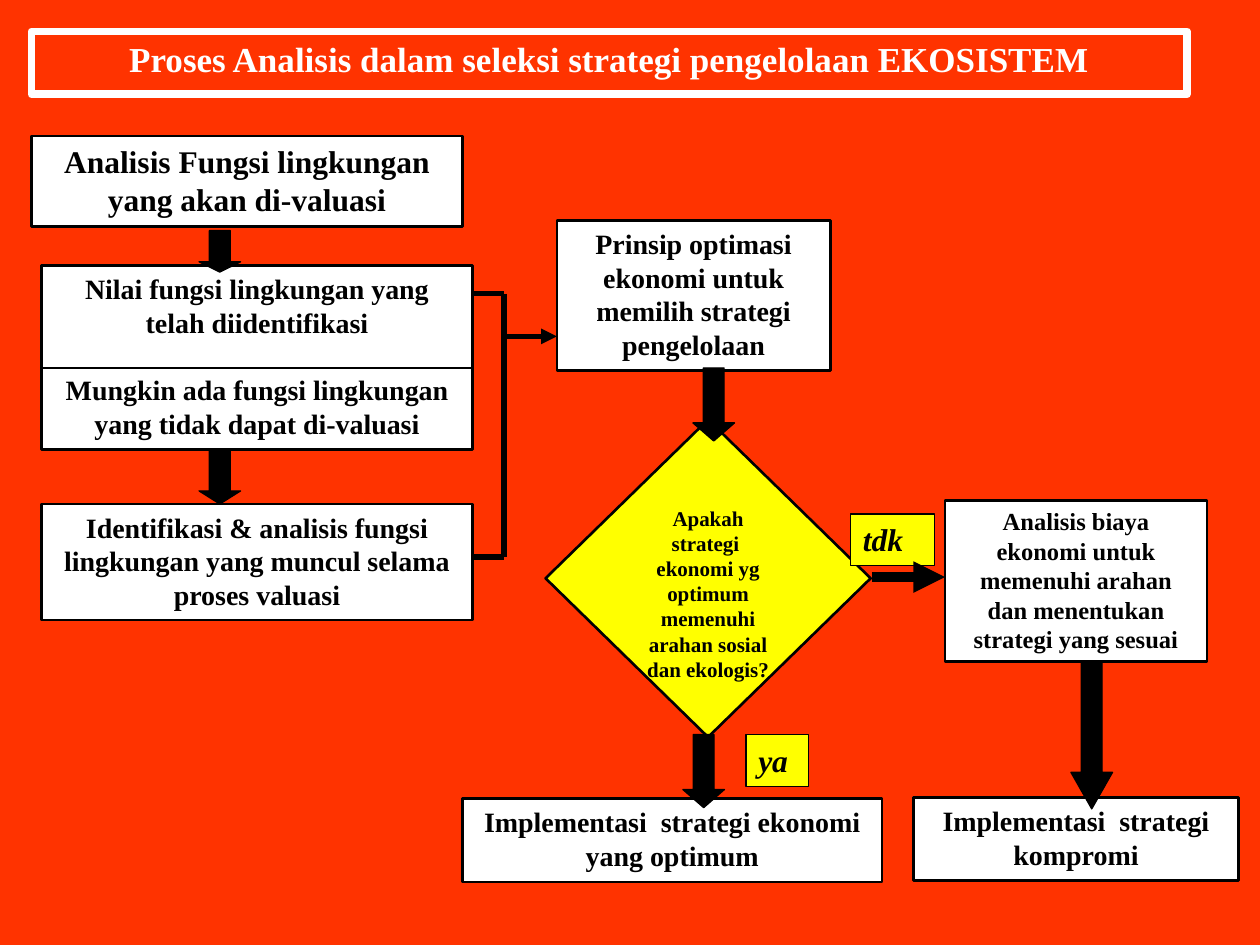
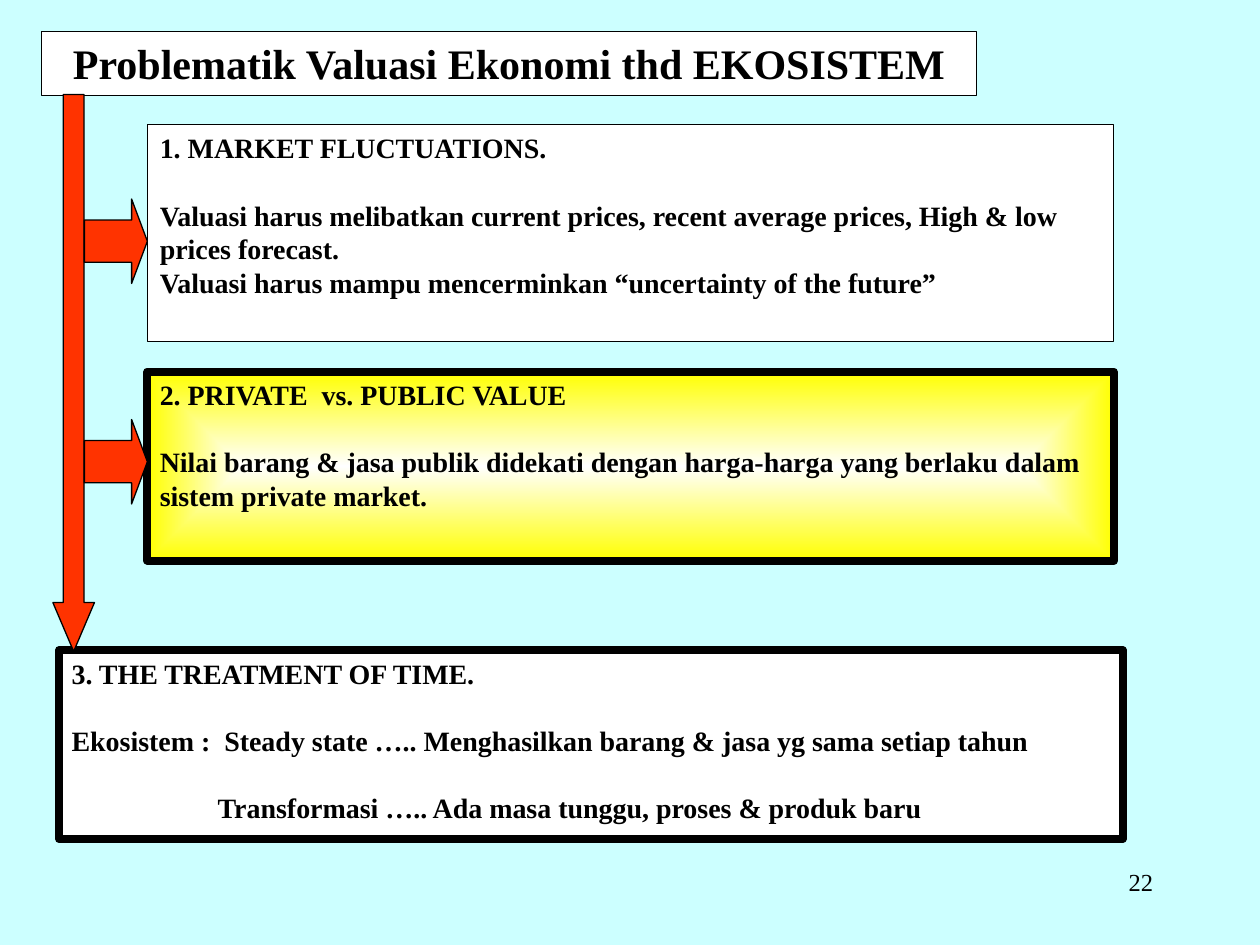
from pptx import Presentation
from pptx.dml.color import RGBColor
from pptx.enum.shapes import MSO_CONNECTOR, MSO_SHAPE
from pptx.enum.text import MSO_ANCHOR, PP_ALIGN
from pptx.oxml.ns import qn
from pptx.util import Inches, Pt
from lxml.etree import SubElement

RED = RGBColor(0xFF, 0x33, 0x00)
AQUA = RGBColor(0xCC, 0xFF, 0xFF)
WHITE = RGBColor(0xFF, 0xFF, 0xFF)
BLACK = RGBColor(0x00, 0x00, 0x00)
YELLOW = RGBColor(0xFF, 0xFF, 0x00)

CENTER = {"alignment": PP_ALIGN.CENTER}
LEFT = {"alignment": PP_ALIGN.LEFT}
RIGHT = {"alignment": PP_ALIGN.RIGHT}
GAP = {"space_before": Pt(19.2)}


class Deck:
    """Builds slides of boxes, block arrows and lines in one shared style."""

    def __init__(self):
        self.prs = Presentation()
        self.prs.slide_width, self.prs.slide_height = Inches(10), Inches(7.5)
        self.font = {"name": "Times New Roman", "bold": True}
        self.s = None

    def slide(self, background):
        self.s = self.prs.slides.add_slide(self.prs.slide_layouts[6])
        fill = self.s.background.fill
        fill.solid()
        fill.fore_color.rgb = background

    def text(self, sp, paragraphs, size, layout, color=BLACK, **font):
        tf = sp.text_frame
        tf.word_wrap = True
        tf.vertical_anchor = MSO_ANCHOR.TOP
        for i, (words, extra) in enumerate(paragraphs):
            p = tf.paragraphs[0] if i == 0 else tf.add_paragraph()
            for name, value in {**layout, **extra}.items():
                setattr(p, name, value)
            r = p.add_run()
            r.text = words
            for name, value in {**self.font, "size": Pt(size), **font}.items():
                setattr(r.font, name, value)
            r.font.color.rgb = color

    def shape(self, kind, at, fill, line, width):
        sp = self.s.shapes.add_shape(kind, *map(Inches, at))
        sp.shadow.inherit = False
        if fill is None:
            sp.fill.background()
        else:
            sp.fill.solid()
            sp.fill.fore_color.rgb = fill
        sp.line.color.rgb = line
        sp.line.width = Pt(width)
        return sp

    def box(self, at, paragraphs, size, layout=CENTER, fill=WHITE, line=BLACK,
            width=1.5, kind=MSO_SHAPE.RECTANGLE, **font):
        if isinstance(paragraphs, str):
            paragraphs = [(paragraphs, {})]
        sp = self.shape(kind, at, fill, line, width)
        self.text(sp, paragraphs, size, layout, **font)
        return sp

    def glow(self, sp, inner, outer):
        sp.fill.gradient()
        for stop, color, position in zip(sp.fill.gradient_stops, (inner, outer), (0, 1)):
            stop.color.rgb = color
            stop.position = position
        grad = sp._element.spPr.find(qn("a:gradFill"))
        grad.remove(grad.find(qn("a:lin")))
        shade = SubElement(grad, qn("a:path"), {"path": "shape"})
        SubElement(shade, qn("a:fillToRect"), dict.fromkeys("ltrb", "50000"))

    def arrow(self, at, head, kind=MSO_SHAPE.DOWN_ARROW, fill=BLACK):
        sp = self.shape(kind, at, fill, BLACK, 0.75)
        sp.adjustments[0], sp.adjustments[1] = 0.5, head

    def line(self, x1, y1, x2, y2, width=3, head=False):
        c = self.s.shapes.add_connector(
            MSO_CONNECTOR.STRAIGHT, *map(Inches, (x1, y1, x2, y2)))
        c.line.color.rgb = BLACK
        c.line.width = Pt(width)
        props = c._element.spPr
        if head:
            SubElement(props.find(qn("a:ln")), qn("a:tailEnd"), {"type": "triangle"})
        SubElement(props, qn("a:effectLst"))

    def number(self, at, digits):
        sp = self.s.shapes.add_textbox(*map(Inches, at))
        self.text(sp, [(digits, {})], 14, RIGHT, bold=False)


def selection_process(deck):
    deck.slide(RED)
    deck.box((0.25, 0.25, 9.17, 0.5),
             "Proses Analisis dalam seleksi strategi pengelolaan EKOSISTEM",
             20, fill=None, line=WHITE, width=4.5, color=WHITE)
    deck.box((0.25, 1.08, 3.42, 0.72),
             "Analisis Fungsi lingkungan yang akan di-valuasi", 18)
    deck.box((0.33, 2.11, 3.42, 1.46), [
        ("Nilai fungsi lingkungan yang telah diidentifikasi", {}),
        ("Mungkin ada fungsi lingkungan yang tidak dapat di-valuasi", GAP)], 16)
    deck.line(0.33, 2.92, 3.75, 2.92, 0.75)
    for at, step, size in (
            ((0.33, 4, 3.42, 0.92),
             "Identifikasi & analisis fungsi lingkungan yang muncul selama proses valuasi", 16),
            ((4.42, 1.75, 2.17, 1.19),
             "Prinsip optimasi ekonomi untuk memilih strategi pengelolaan", 16),
            ((3.67, 6.34, 3.33, 0.66), "Implementasi  strategi ekonomi yang optimum", 16),
            ((7.5, 3.97, 2.08, 1.28),
             "Analisis biaya ekonomi untuk memenuhi arahan dan menentukan strategi yang sesuai", 14),
            ((7.25, 6.33, 2.58, 0.66), "Implementasi  strategi kompromi", 16)):
        deck.box(at, step, size)
    deck.box((4.33, 3.33, 2.58, 2.52),
             "Apakah strategi  ekonomi yg optimum memenuhi arahan sosial dan ekologis?",
             12, fill=YELLOW, kind=MSO_SHAPE.DIAMOND)
    for at, answer in (((5.92, 5.83, 0.5, 0.41), "ya"), ((6.75, 4.08, 0.67, 0.41), "tdk")):
        deck.box(at, answer, 18, LEFT, YELLOW, width=0.75, italic=True)
    deck.line(6.92, 4.58, 7.5, 4.58, 6, head=True)
    for x, y, height in ((8.5, 5.25, 1.17), (5.42, 5.83, 0.58), (5.5, 2.92, 0.58),
                         (1.58, 1.83, 0.33), (1.58, 3.58, 0.42)):
        deck.arrow((x, y, 0.33, height), height * 0.75)
    deck.line(4, 2.33, 4, 4.42)
    for y in (2.33, 4.42):
        deck.line(3.75, y, 4, y)
    deck.line(4, 2.67, 4.42, 2.67, head=True)


def valuation_problems(deck):
    deck.slide(AQUA)
    deck.number((7.17, 6.83, 2.08, 0.5), "22")
    deck.box((0.33, 0.25, 7.42, 0.51), "Problematik Valuasi Ekonomi thd EKOSISTEM",
             24, width=0.75)
    deck.box((1.17, 0.99, 7.67, 1.72), [
        ("1. MARKET FLUCTUATIONS.", {}),
        ("Valuasi harus melibatkan current prices, recent average prices, "
         "High & low prices forecast.", GAP),
        ("Valuasi harus mampu mencerminkan “uncertainty of the future”", {})],
        16, LEFT, width=0.75)
    private = deck.box((1.17, 2.95, 7.67, 1.5), [
        ("2. PRIVATE  vs. PUBLIC VALUE", {}),
        ("Nilai barang & jasa publik didekati dengan harga-harga yang berlaku "
         "dalam sistem private market.", GAP)], 16, LEFT, width=4.5)
    deck.glow(private, WHITE, YELLOW)
    treatment = deck.box((0.47, 5.16, 8.44, 1.5), [
        ("3. THE TREATMENT OF TIME.", {}),
        ("Ekosistem :  Steady state ….. Menghasilkan barang & jasa yg sama setiap tahun", GAP),
        ("Transformasi ….. Ada masa tunggu, proses & produk baru", GAP)],
        16, LEFT, width=4.5)
    last = treatment.text_frame.paragraphs[-1]
    last._p.get_or_add_pPr().set("marL", str(Inches(1.16)))
    deck.arrow((0.42, 0.75, 0.33, 4.42), 1.175, fill=RED)
    for y in (1.58, 3.33):
        deck.arrow((0.67, y, 0.5, 0.67), 0.25, MSO_SHAPE.RIGHT_ARROW, RED)


def main():
    deck = Deck()
    selection_process(deck)
    valuation_problems(deck)
    deck.prs.save("out.pptx")


if __name__ == "__main__":
    main()
